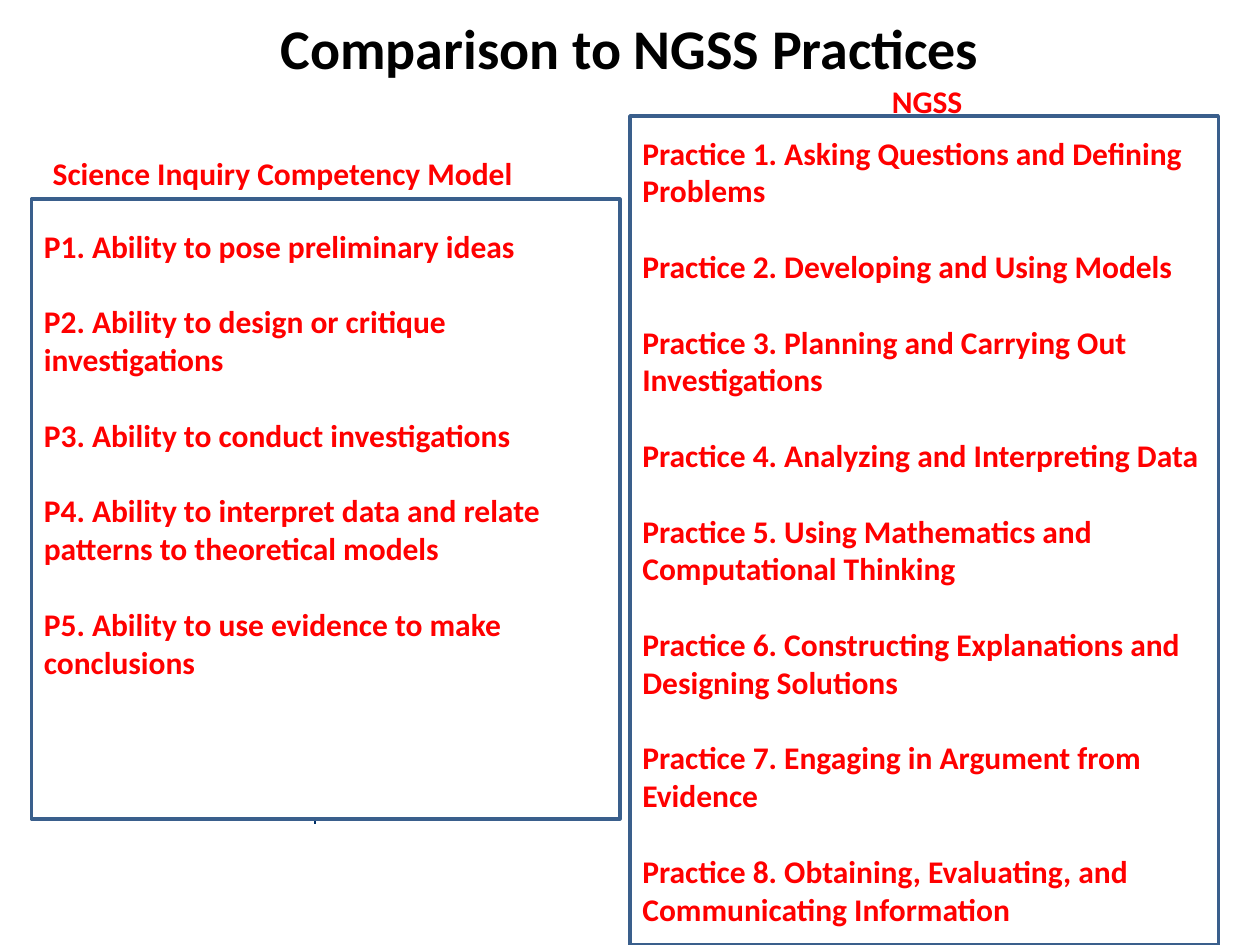
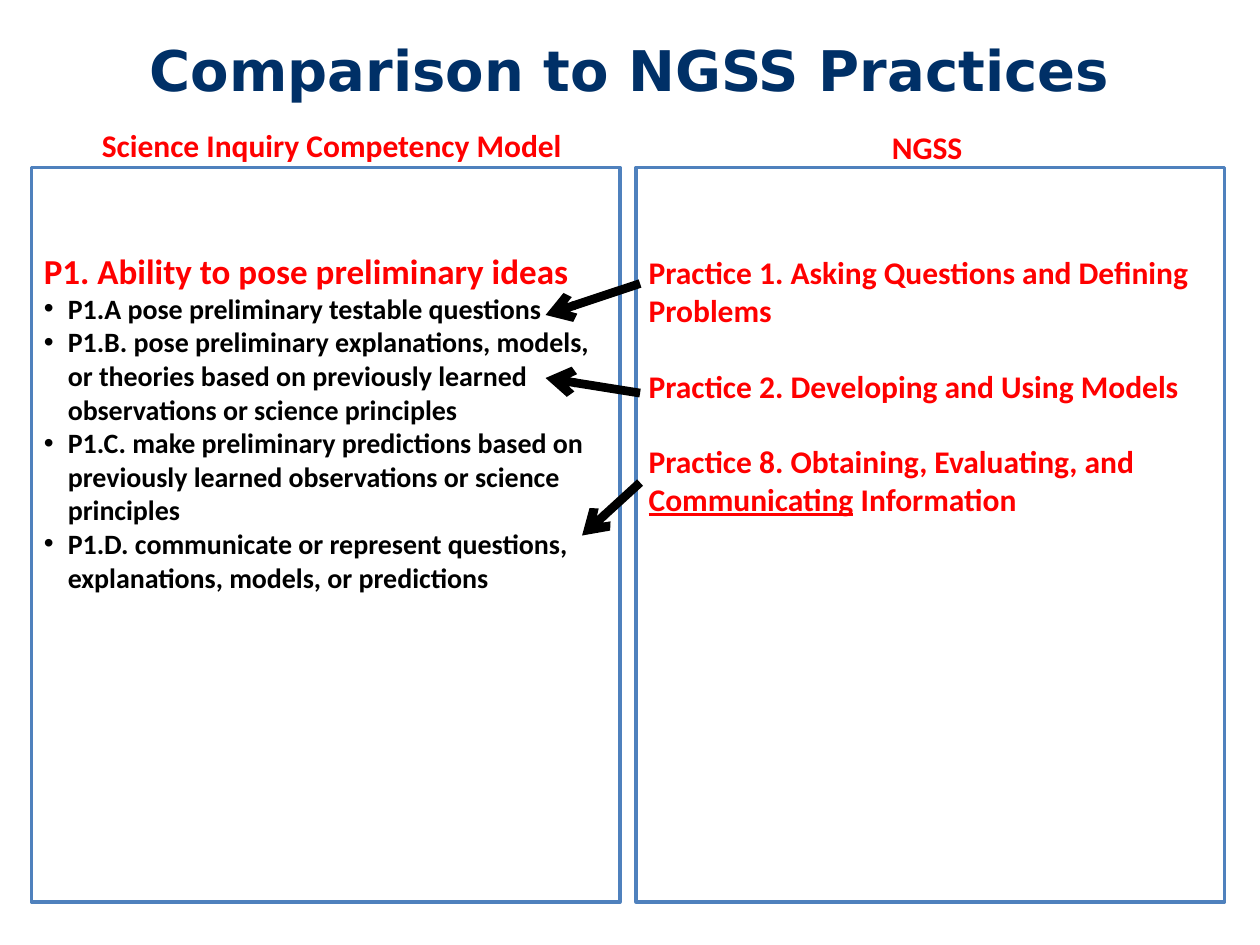
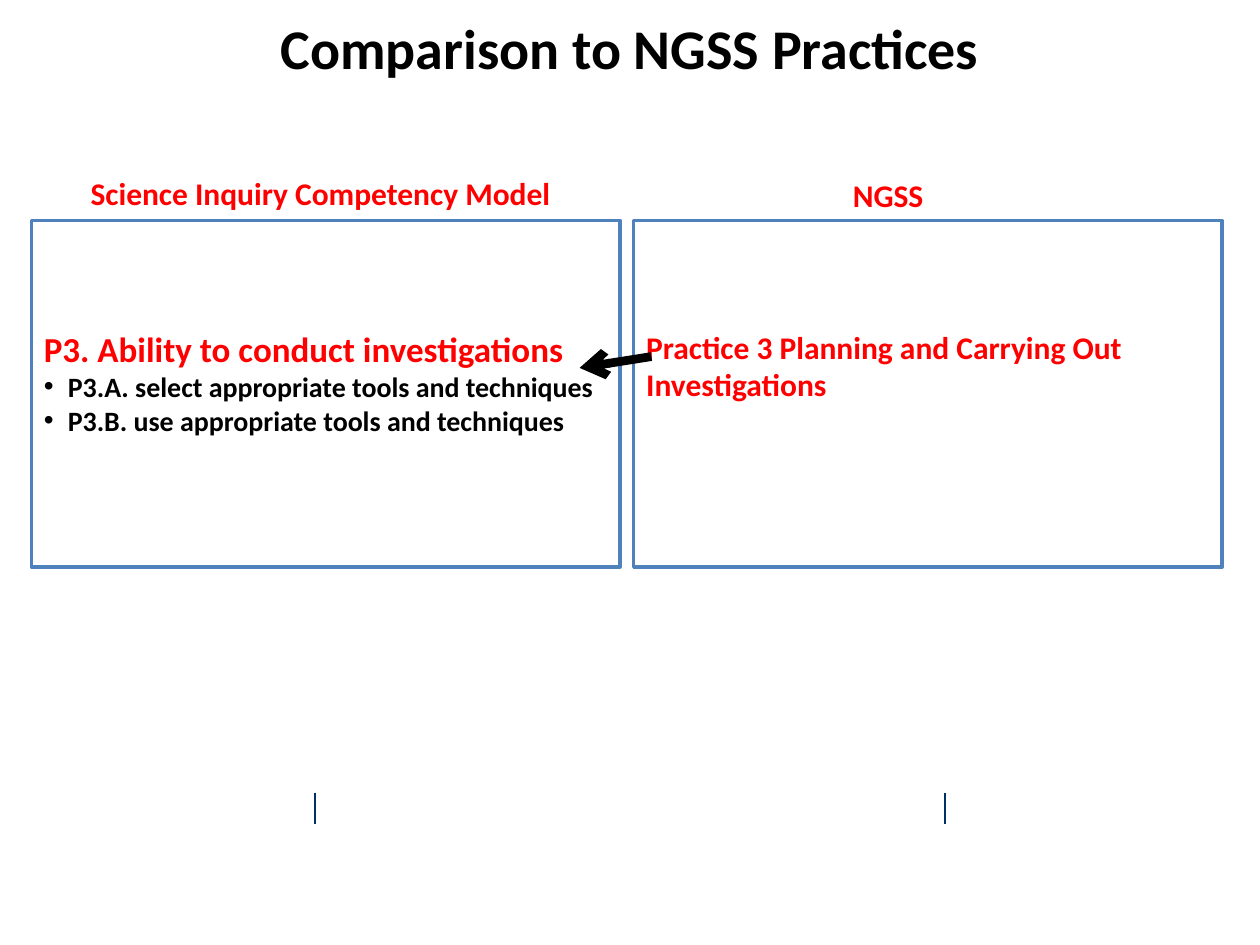
from dataclasses import dataclass

from lxml.etree import SubElement
from pptx import Presentation
from pptx.dml.color import RGBColor
from pptx.enum.shapes import MSO_CONNECTOR, MSO_SHAPE
from pptx.enum.text import MSO_ANCHOR, PP_ALIGN
from pptx.oxml.ns import qn
from pptx.util import Inches, Pt


@dataclass(frozen=True)
class Theme:
    body_font: str = "Calibri"
    display_font: str = "DejaVu Sans"
    red: str = "FF0000"
    black: str = "000000"
    white: str = "FFFFFF"
    navy: str = "003067"
    blue: str = "4F81BD"
    dark_blue: str = "3A5F8C"
    title_size: int = 32
    ability_size: int = 20
    label_size: int = 18
    detail_size: int = 16
    item_gap: float = 21.6
    outline: float = 2
    arrow: float = 5
    tick: float = 0.75


THEME = Theme()


@dataclass(frozen=True)
class Area:
    left: float
    top: float
    width: float
    height: float


@dataclass(frozen=True)
class Item:
    text: str
    size: int = THEME.label_size
    color: str = THEME.red
    gap: float = 0
    bullet: bool = False
    underlined: str = ""


@dataclass(frozen=True)
class Panel:
    """A column: its heading, its framed list and the space above the list."""
    heading: str
    heading_area: Area
    area: Area
    items: list[Item]
    space_above: float


@dataclass(frozen=True)
class Arrow:
    start: tuple[float, float]
    end: tuple[float, float]


@dataclass(frozen=True)
class Comparison:
    panels: list[Panel]
    arrows: list[Arrow]
    ticks: list[float]
    title_top: float = -0.25
    title_font: str = THEME.body_font
    title_color: str = THEME.black
    frame_color: str = THEME.blue


# Text
def add_text(para, text: str, *, size: float, color: str,
             font: str = THEME.body_font, underline: bool = False) -> None:
    span = para.add_run()
    span.text = text
    span.font.name = font
    span.font.size = Pt(size)
    span.font.bold = True
    span.font.underline = underline
    span.font.color.rgb = RGBColor.from_string(color)


def add_bullet(para) -> None:
    properties = para._p.get_or_add_pPr()
    indent = Inches(0.19)
    properties.set("marL", str(indent))
    properties.set("indent", str(-indent))
    SubElement(properties, qn("a:buFont")).set("typeface", "Arial")
    SubElement(properties, qn("a:buChar")).set("char", "•")


def add_item(para, item: Item, gap: float) -> None:
    para.alignment = PP_ALIGN.LEFT
    para.space_before = Pt(gap)
    if item.bullet:
        add_bullet(para)
    before, marked, after = (item.text.partition(item.underlined)
                             if item.underlined else (item.text, "", ""))
    for text, underline in ((before, False), (marked, True), (after, False)):
        if text:
            add_text(para, text, size=item.size, color=item.color, underline=underline)


# Shapes
def place(area: Area) -> tuple:
    return Inches(area.left), Inches(area.top), Inches(area.width), Inches(area.height)


def add_label(page, text: str, area: Area, *, wrap: bool = False,
              anchor=MSO_ANCHOR.TOP, align=PP_ALIGN.LEFT, **text_format) -> None:
    frame = page.shapes.add_textbox(*place(area)).text_frame
    frame.word_wrap = wrap
    frame.vertical_anchor = anchor
    frame.paragraphs[0].alignment = align
    add_text(frame.paragraphs[0], text, **text_format)


def add_frame(page, panel: Panel, color: str) -> None:
    box = page.shapes.add_shape(MSO_SHAPE.RECTANGLE, *place(panel.area))
    box.shadow.inherit = False
    box.fill.solid()
    box.fill.fore_color.rgb = RGBColor.from_string(THEME.white)
    box.line.color.rgb = RGBColor.from_string(color)
    box.line.width = Pt(THEME.outline)
    frame = box.text_frame
    frame.word_wrap = True
    frame.vertical_anchor = MSO_ANCHOR.TOP
    frame.margin_top = Inches(panel.space_above)
    for index, item in enumerate(panel.items):
        para = frame.add_paragraph() if index else frame.paragraphs[0]
        add_item(para, item, item.gap if index else 0)


def add_line(page, start: tuple[float, float], end: tuple[float, float], *,
             color: str, width: float, arrowhead: bool = False) -> None:
    line = page.shapes.add_connector(
        MSO_CONNECTOR.STRAIGHT, *(Inches(value) for value in start + end))
    line.line.color.rgb = RGBColor.from_string(color)
    line.line.width = Pt(width)
    if arrowhead:
        SubElement(line.line._get_or_add_ln(), qn("a:tailEnd")).set("type", "arrow")
    SubElement(line._element.spPr, qn("a:effectLst"))


def add_comparison(deck, comparison: Comparison) -> None:
    page = deck.slides.add_slide(deck.slide_layouts[6])
    for x in comparison.ticks:
        add_line(page, (x, 6.29), (x, 6.54), color=THEME.navy, width=THEME.tick)
    for panel in comparison.panels:
        add_frame(page, panel, comparison.frame_color)
    for arrow in comparison.arrows:
        add_line(page, arrow.start, arrow.end, color=THEME.black,
                 width=THEME.arrow, arrowhead=True)
    add_label(page, "Comparison to NGSS Practices",
              Area(0.5, comparison.title_top, 9, 1.25), wrap=True,
              anchor=MSO_ANCHOR.MIDDLE, align=PP_ALIGN.CENTER,
              size=THEME.title_size, color=comparison.title_color,
              font=comparison.title_font)
    for panel in comparison.panels:
        add_label(page, panel.heading, panel.heading_area,
                  size=THEME.label_size, color=THEME.red)


# Content builders
def spaced(*texts: str, underlined: str = "") -> list[Item]:
    return [Item(text, gap=THEME.item_gap,
                 underlined=underlined if underlined in text else "") for text in texts]


def ability(name: str, *details: str) -> list[Item]:
    return [Item(name, THEME.ability_size)] + [
        Item(text, THEME.detail_size, THEME.black, bullet=True) for text in details]


def model_panel(heading_area: Area, area: Area, items: list[Item], above: float) -> Panel:
    return Panel("Science Inquiry Competency Model", heading_area, area, items, above)


def ngss_panel(heading_area: Area, area: Area, items: list[Item], above: float) -> Panel:
    return Panel("NGSS", heading_area, area, items, above)


P1 = "P1. Ability to pose preliminary ideas"
P3 = "P3. Ability to conduct investigations"
PRACTICE_1 = "Practice 1. Asking Questions and Defining Problems"
PRACTICE_2 = "Practice 2. Developing and Using Models"
PRACTICE_8 = "Practice 8. Obtaining, Evaluating, and Communicating Information"

COMPARISONS = [
    # All abilities and practices
    Comparison(
        panels=[
            model_panel(Area(0.32, 1.17, 3.94, 0.4), Area(0.25, 1.58, 4.67, 4.92), spaced(
                P1,
                "P2. Ability to design or critique investigations",
                P3,
                "P4. Ability to interpret data and relate patterns to theoretical models",
                "P5. Ability to use evidence to make conclusions",
            ), 0.22),
            ngss_panel(Area(6.98, 0.6, 0.77, 0.4), Area(5, 0.92, 4.67, 6.58), spaced(
                PRACTICE_1,
                PRACTICE_2,
                "Practice 3. Planning and Carrying Out Investigations",
                "Practice 4. Analyzing and Interpreting Data",
                "Practice 5. Using Mathematics and Computational Thinking",
                "Practice 6. Constructing Explanations and Designing Solutions",
                "Practice 7. Engaging in Argument from Evidence",
                PRACTICE_8,
            ), 0.14),
        ],
        arrows=[],
        ticks=[2.5],
        frame_color=THEME.dark_blue,
    ),
    # Preliminary ideas
    Comparison(
        panels=[
            model_panel(Area(0.71, 0.95, 3.88, 0.4), Area(0.25, 1.33, 4.67, 5.83), ability(
                P1,
                "P1.A pose preliminary testable questions",
                "P1.B. pose preliminary explanations, models, or theories based on "
                "previously learned observations or science principles",
                "P1.C. make preliminary predictions based on previously learned "
                "observations or science principles",
                "P1.D. communicate or represent questions, explanations, models, "
                "or predictions",
            ), 0.65),
            ngss_panel(Area(6.98, 0.97, 0.77, 0.44), Area(5.05, 1.33, 4.67, 5.83), spaced(
                PRACTICE_1, PRACTICE_2, PRACTICE_8, underlined="Communicating",
            ), 0.68),
        ],
        arrows=[
            Arrow((5.08, 3.83), (4.62, 4.25)),
            Arrow((5.08, 2.25), (4.33, 2.5)),
            Arrow((5.08, 3.12), (4.33, 3)),
        ],
        ticks=[],
        title_top=-0.08,
        title_font=THEME.display_font,
        title_color=THEME.navy,
    ),
    # Conducting investigations
    Comparison(
        panels=[
            model_panel(Area(0.62, 1.33, 3.88, 0.4), Area(0.25, 1.75, 4.67, 2.75), ability(
                P3,
                "P3.A. select appropriate tools and techniques",
                "P3.B. use appropriate tools and techniques",
            ), 0.85),
            ngss_panel(Area(6.67, 1.35, 0.77, 0.4), Area(5.03, 1.75, 4.67, 2.75), spaced(
                "Practice 3 Planning and Carrying Out Investigations",
            ), 0.85),
        ],
        arrows=[Arrow((5.17, 2.83), (4.6, 2.92))],
        ticks=[2.5, 7.5],
    ),
]


def main() -> None:
    deck = Presentation()
    deck.slide_width, deck.slide_height = Inches(10), Inches(7.5)
    for comparison in COMPARISONS:
        add_comparison(deck, comparison)
    deck.save("out.pptx")


if __name__ == "__main__":
    main()
